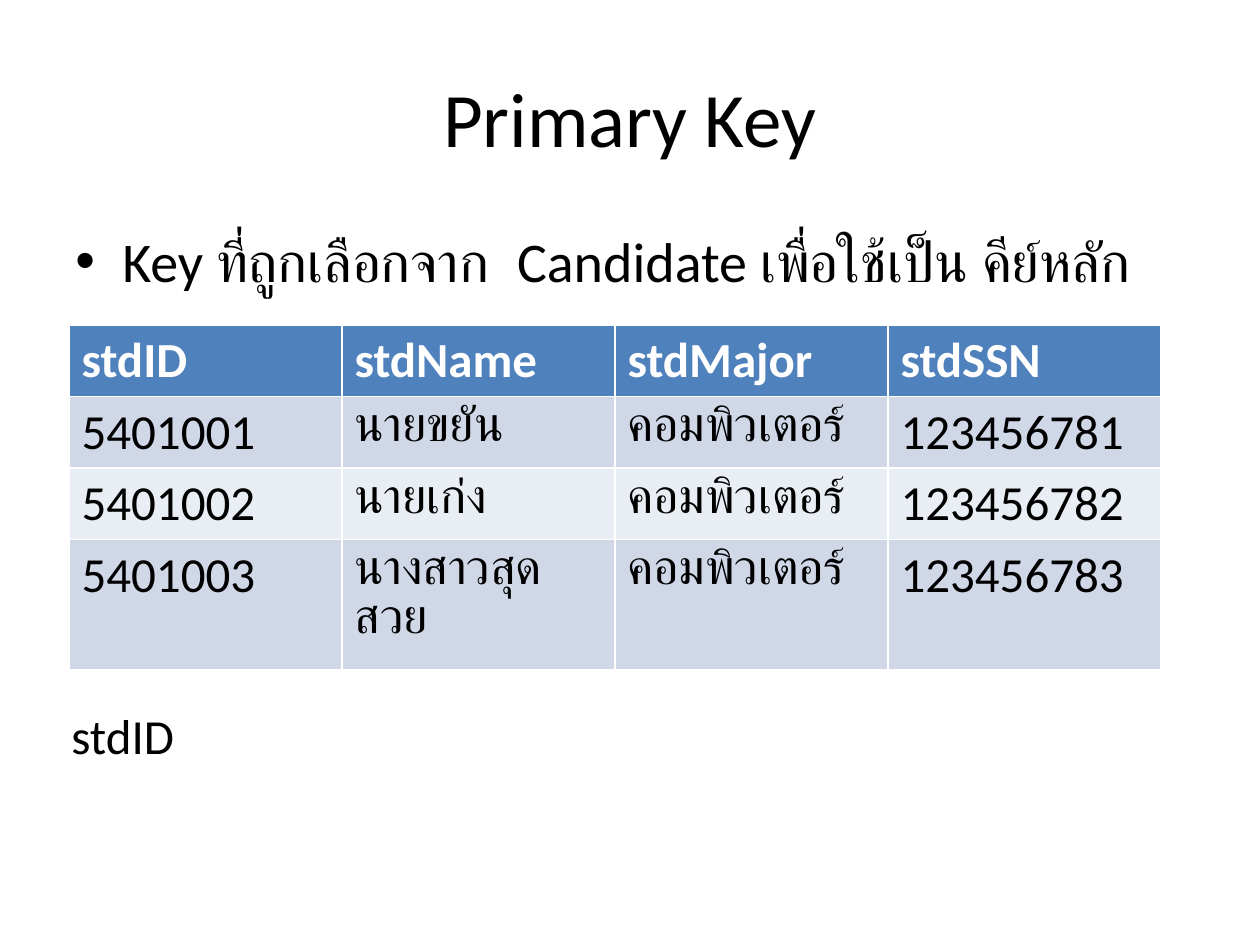
from lxml import etree
from pptx import Presentation
from pptx.dml.color import RGBColor
from pptx.enum.text import MSO_ANCHOR, PP_ALIGN
from pptx.oxml.ns import qn
from pptx.util import Emu, Pt

MIDDLE = MSO_ANCHOR.MIDDLE
CENTER = PP_ALIGN.CENTER

TITLE = "Primary Key"
BULLET = "Key ที่ถูกเลือกจาก  Candidate เพื่อใช้เป็น คีย์หลัก"
STUDENTS = [
    ("stdID", "stdName", "stdMajor", "stdSSN"),
    ("5401001", "นายขยัน", "คอมพิวเตอร์", "123456781"),
    ("5401002", "นายเก่ง", "คอมพิวเตอร์", "123456782"),
    ("5401003", "นางสาวสุดสวย", "คอมพิวเตอร์", "123456783"),
]
ANSWER = "stdID"

FONT = "Calibri"
BLACK = RGBColor(0x00, 0x00, 0x00)
WHITE = RGBColor(0xFF, 0xFF, 0xFF)
HEADER = RGBColor(0x4F, 0x81, 0xBD)
BANDS = [RGBColor(0xE9, 0xED, 0xF4), RGBColor(0xD0, 0xD8, 0xE8)]

COL_W, ROW_H = 273, 52
BULLET_INDENT = 47


def px(n):
    return Emu(n * 914400 // 126)


def write(tf, text, size, color=BLACK, bold=False):
    p = tf.paragraphs[0]
    p.text = text
    p.font.name = FONT
    p.font.size = Pt(size)
    p.font.color.rgb = color
    p.font.bold = bold
    return p


def add_text(s, box, text, size):
    tf = s.shapes.add_textbox(*map(px, box)).text_frame
    tf.word_wrap = True
    return write(tf, text, size)


def add_bullet(p, indent):
    pPr = p._p.get_or_add_pPr()
    pPr.set("marL", str(indent))
    pPr.set("indent", str(-indent))
    font = etree.Element(qn("a:buFont"), typeface="Arial")
    char = etree.Element(qn("a:buChar"), char="•")
    pPr.find(qn("a:defRPr")).addprevious(font)
    font.addnext(char)


prs = Presentation()
prs.slide_width, prs.slide_height = px(1260), px(945)
s = prs.slides.add_slide(prs.slide_layouts[5])

title = s.shapes.title
title.left, title.top, title.width, title.height = map(px, (63, 38, 1134, 157))
title.text_frame.vertical_anchor = MIDDLE
write(title.text_frame, TITLE, 44).alignment = CENTER

p = add_text(s, (63, 220, 1134, 144), BULLET, 32)
p.space_before = Pt(6.4)
add_bullet(p, px(BULLET_INDENT))

n_rows, n_cols = len(STUDENTS), len(STUDENTS[0])
table = s.shapes.add_table(
    n_rows, n_cols, px(69), px(325), px(n_cols * COL_W), px(n_rows * ROW_H)
).table
for i, row in enumerate(STUDENTS):
    for j, text in enumerate(row):
        cell = table.cell(i, j)
        cell.fill.solid()
        cell.fill.fore_color.rgb = BANDS[i % 2] if i else HEADER
        write(cell.text_frame, text, 28, BLACK if i else WHITE, i == 0)

add_text(s, (59, 699, 335, 72), ANSWER, 28)

prs.save("out.pptx")
